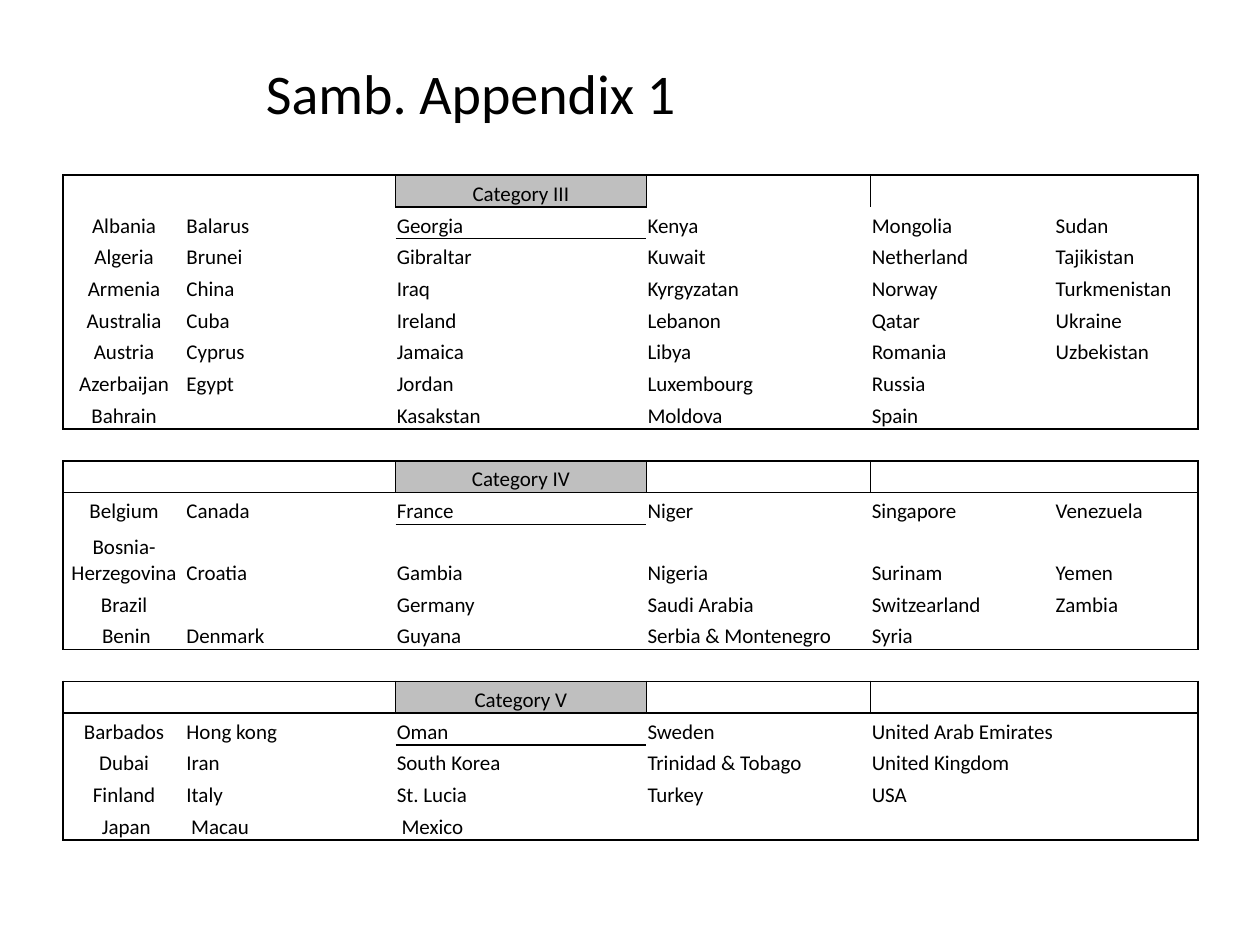
import collections

import pptx
import pptx.dml.color
import pptx.enum.text
import pptx.oxml
import pptx.oxml.ns
import pptx.util
from pptx.util import Inches

FONT = "Calibri"
BLACK, GREY = "000000", "BFBFBF"
NO_STYLE = "{2D5ABB26-0587-4C30-8999-92F81FD0307C}"
COL_WIDTHS = [0.97, 1.67, 1.99, 1.78, 0.73, 0.73, 1.14]
TEXT_COLS = [0, 1, 2, 3, 4, 6]
HEADER_COL = 2
TALL_ROW, TALL_HEIGHT = "Bosnia-Herzegovina", 0.49

# Names that run on across several columns
SPANS = {"Netherland": 2, "Singapore": 2, "Switzearland": 2,
         "United Arab Emirates": 3, "United Kingdom": 2}

CATEGORIES = {
    "Category III": [
        ["Albania", "Balarus", "Georgia", "Kenya", "Mongolia", "Sudan"],
        ["Algeria", "Brunei", "Gibraltar", "Kuwait", "Netherland", "Tajikistan"],
        ["Armenia", "China", "Iraq", "Kyrgyzatan", "Norway", "Turkmenistan"],
        ["Australia", "Cuba", "Ireland", "Lebanon", "Qatar", "Ukraine"],
        ["Austria", "Cyprus", "Jamaica", "Libya", "Romania", "Uzbekistan"],
        ["Azerbaijan", "Egypt", "Jordan", "Luxembourg", "Russia", ""],
        ["Bahrain", "", "Kasakstan", "Moldova", "Spain", ""],
    ],
    "Category IV": [
        ["Belgium", "Canada", "France", "Niger", "Singapore", "Venezuela"],
        ["Bosnia-Herzegovina", "Croatia", "Gambia", "Nigeria", "Surinam", "Yemen"],
        ["Brazil", "", "Germany", "Saudi Arabia", "Switzearland", "Zambia"],
        [" Benin", "Denmark", "Guyana", "Serbia & Montenegro", "Syria", ""],
    ],
    "Category V": [
        ["Barbados", "Hong kong", "Oman", "Sweden", "United Arab Emirates", ""],
        ["Dubai", "Iran", "South Korea", "Trinidad & Tobago", "United Kingdom", ""],
        ["Finland", "Italy", "St. Lucia", "Turkey", "USA", ""],
        [" Japan", " Macau", " Mexico", "", "", ""],
    ],
}


def rgb(color):
    return pptx.dml.color.RGBColor.from_string(color)


def style_run(r, size):
    r.font.name = FONT
    r.font.size = pptx.util.Pt(size)
    r.font.color.rgb = rgb(BLACK)


def add_title(s, text, left, top, width, height):
    sp = s.shapes.title
    sp.left, sp.top, sp.width, sp.height = map(Inches, (left, top, width, height))
    tf = sp.text_frame
    tf.text = text
    tf.vertical_anchor = pptx.enum.text.MSO_ANCHOR.MIDDLE
    p = tf.paragraphs[0]
    p.alignment = pptx.enum.text.PP_ALIGN.LEFT
    style_run(p.runs[0], 32)


def layout_rows():
    """Return the table rows and the (first, last) rows of each category."""
    rows, ranges = [], []
    for name, lines in CATEGORIES.items():
        if rows:
            rows.append([""] * len(COL_WIDTHS))
        first = len(rows)
        for line in [["", "", name, "", "", ""]] + lines:
            row = [""] * len(COL_WIDTHS)
            for c, text in zip(TEXT_COLS, line):
                row[c] = text
            rows.append(row)
        ranges.append((first, len(rows) - 1))
    return rows, ranges


def frame(edges, top, left, bottom, right):
    """Note the sides of a frame on the cells both inside and outside it."""
    for c in range(left, right + 1):
        edges[top, c].add("T")
        edges[top - 1, c].add("B")
        edges[bottom, c].add("B")
        edges[bottom + 1, c].add("T")
    for r in range(top, bottom + 1):
        edges[r, left].add("L")
        edges[r, left - 1].add("R")
        edges[r, right].add("R")
        edges[r, right + 1].add("L")


def draw_borders(cell, sides):
    tc_pr = cell._tc.get_or_add_tcPr()
    for side in "LRTB":
        if side in sides:
            tc_pr.append(pptx.oxml.parse_xml(
                f'<a:ln{side} {pptx.oxml.ns.nsdecls("a")} w="12700"><a:solidFill>'
                f'<a:srgbClr val="{BLACK}"/></a:solidFill></a:ln{side}>'))


def fill_cell(cell, text, sides, centred, shaded):
    draw_borders(cell, sides)
    if shaded:
        cell.fill.solid()
        cell.fill.fore_color.rgb = rgb(GREY)
    else:
        cell.fill.background()
    cell.margin_left = cell.margin_right = cell.margin_top = Inches(0.01)
    cell.margin_bottom = 0
    cell.vertical_anchor = pptx.enum.text.MSO_ANCHOR.BOTTOM
    p = cell.text_frame.paragraphs[0]
    if text:
        p.text = text
        style_run(p.runs[0], 12)
    else:
        # Keeps an empty cell from stretching its row
        p._p.get_or_add_endParaRPr().set("sz", "1200")
    if centred:
        p.alignment = pptx.enum.text.PP_ALIGN.CENTER


def add_country_table(s, left, top, width, height):
    rows, ranges = layout_rows()
    n_cols = len(COL_WIDTHS)
    table_shape = s.shapes.add_table(
        len(rows), n_cols, *map(Inches, (left, top, width, height)))
    table = table_shape.table
    table.first_row = table.horz_banding = False
    table._tbl.tblPr.find(pptx.oxml.ns.qn("a:tableStyleId")).text = NO_STYLE

    # Column widths and row heights
    for column, col_width in zip(table.columns, COL_WIDTHS):
        column.width = Inches(col_width)
    row_height = (height - TALL_HEIGHT) / (len(rows) - 1)
    for row, texts in zip(table.rows, rows):
        row.height = Inches(TALL_HEIGHT if texts[0] == TALL_ROW else row_height)

    # Frames around each category and its heading
    edges = collections.defaultdict(set)
    for first, last in ranges:
        frame(edges, first, 0, last, n_cols - 1)
        frame(edges, first, HEADER_COL, first, HEADER_COL)

    # Cells
    for r, texts in enumerate(rows):
        for c, text in enumerate(texts):
            cell = table.cell(r, c)
            end = c + SPANS.get(text, 1) - 1
            heading = text in CATEGORIES
            fill_cell(cell, text, edges[r, c] | edges[r, end],
                      centred=c == 0 or heading, shaded=heading)
            if end > c:
                cell.merge(table.cell(r, end))


def main():
    prs = pptx.Presentation()
    prs.slide_width, prs.slide_height = Inches(10), Inches(7.5)
    s = prs.slides.add_slide(prs.slide_layouts[5])
    add_title(s, "Samb. Appendix 1", 2.01, 0.3, 7.49, 0.87)
    add_country_table(s, 0.5, 1.39, 9, 5.28)
    prs.save("out.pptx")


if __name__ == "__main__":
    main()
